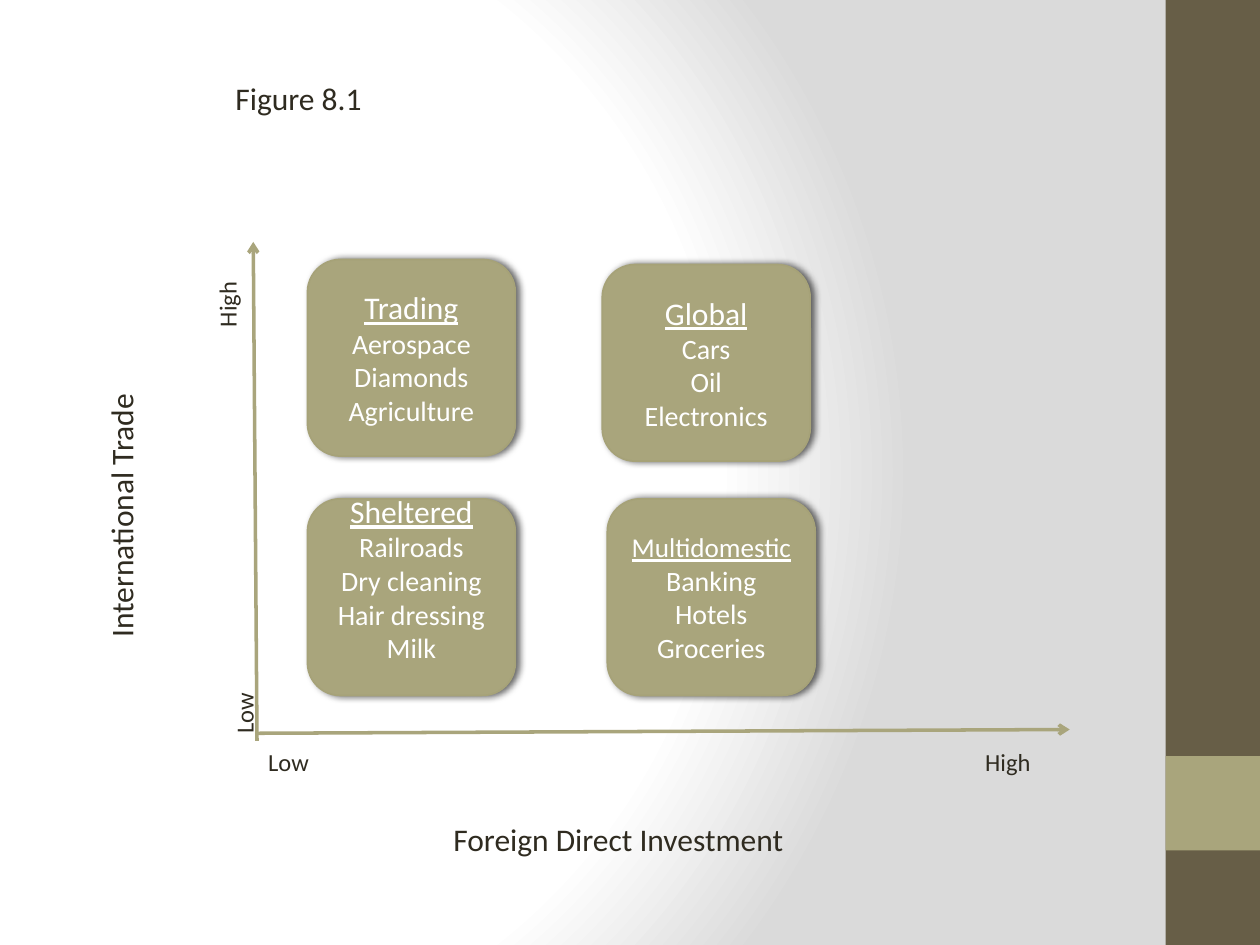
from lxml.etree import SubElement
from pptx import Presentation
from pptx.dml.color import RGBColor
from pptx.enum.shapes import MSO_CONNECTOR as Connector, MSO_SHAPE as Shape
from pptx.enum.text import MSO_ANCHOR as Anchor, MSO_AUTO_SIZE as AutoSize, PP_ALIGN as Align
from pptx.oxml import parse_xml
from pptx.oxml.ns import qn
from pptx.util import Inches, Pt

DARK, OLIVE, EDGE, INK, WHITE = "675E47", "A9A57C", "A6A278", "2F2B20", "FFFFFF"


def paint(target, shade):
    if hasattr(target, "solid"):
        target.solid()
        target = target.fore_color
    target.rgb = RGBColor.from_string(shade)


def write(paragraph, wording, shade, **formats):
    run = paragraph.add_run()
    run.text = wording
    for key, value in {"name": "Calibri", **formats}.items():
        setattr(run.font, key, value)
    paint(run.font.color, shade)


deck = Presentation()
deck.slide_width, deck.slide_height = Inches(10), Inches(7.5)
col, row = deck.slide_width / 100, deck.slide_height / 75
slide = deck.slides.add_slide(deck.slide_layouts[6])
shapes = slide.shapes

slide.background.fill.gradient()
backdrop = slide.element.find(".//" + qn("a:gradFill"))
stops = "".join(
    f'<a:gs pos="{share * 1000}"><a:srgbClr val="{shade}"/></a:gs>'
    for share, shade in [(0, WHITE), (75, WHITE), (100, "DADADA")]
)
backdrop.getparent().replace(backdrop, parse_xml(
    '<a:gradFill xmlns:a="http://schemas.openxmlformats.org/drawingml/2006/main" rotWithShape="1">'
    f'<a:gsLst>{stops}</a:gsLst><a:path path="circle">'
    '<a:fillToRect l="20000" t="50000" r="100000" b="50000"/></a:path></a:gradFill>'
))

for top, height, shade in [(0, 75, DARK), (60, 7.5, OLIVE)]:
    band = shapes.add_shape(
        Shape.RECTANGLE, int(92.5 * col), int(top * row), int(7.5 * col), int(height * row))
    band.shadow.inherit = False
    paint(band.fill, shade)
    band.line.fill.background()

for x1, y1, x2, y2 in [(20.4, 58.8, 20.1, 19.2), (20.3, 58.2, 84.9, 57.9)]:
    axis = shapes.add_connector(
        Connector.STRAIGHT, int(x1 * col), int(y1 * row), int(x2 * col), int(y2 * row))
    axis.line.width = Pt(2)
    paint(axis.line.fill, OLIVE)
    SubElement(axis.line._get_or_add_ln(), qn("a:tailEnd"), type="arrow")
    SubElement(axis._element.spPr, qn("a:effectLst"))

quadrants = [
    (24.4, 20.6, 18, 0.05, "Trading", ["Aerospace", "Diamonds", "Agriculture"]),
    (24.4, 39.6, 18, 0.35, "Sheltered", ["Railroads", "Dry cleaning", "Hair dressing", "Milk"]),
    (47.8, 21, 18, 0.05, "Global", ["Cars", "Oil", "Electronics"]),
    (48.2, 39.6, 15.5, 0.05, "Multidomestic", ["Banking", "Hotels", "Groceries"]),
]
for left, top, heading_size, foot, heading, industries in quadrants:
    quadrant = shapes.add_shape(
        Shape.ROUNDED_RECTANGLE, int(left * col), int(top * row), int(16.5 * col), int(15.6 * row))
    paint(quadrant.fill, OLIVE)
    paint(quadrant.line.fill, EDGE)
    quadrant.line.width = Pt(1)
    quadrant.shadow.inherit = False
    shadow = SubElement(
        quadrant._element.spPr.find(qn("a:effectLst")), qn("a:outerShdw"),
        blurRad=str(Pt(4)), dist=str(Pt(2)), dir="0", rotWithShape="0")
    black = SubElement(shadow, qn("a:srgbClr"), val="000000")
    SubElement(black, qn("a:alpha"), val="60000")
    frame = quadrant.text_frame
    layout = {"word_wrap": True, "vertical_anchor": Anchor.MIDDLE, "margin_bottom": Inches(foot)}
    for key, value in layout.items():
        setattr(frame, key, value)
    write(frame.paragraphs[0], heading, WHITE, size=Pt(heading_size), underline=True)
    for industry in industries:
        write(frame.add_paragraph(), industry, WHITE, size=Pt(16), underline=False)
    for paragraph in frame.paragraphs:
        paragraph.alignment = Align.CENTER

captions = [
    ("International Trade", -3.3, 36.7, 25.8, 18, 270),
    ("Foreign Direct Investment", 35, 64.6, 42.4, 18, 0),
    ("Low", 20.3, 58.8, 7.4, 14, 0),
    ("Low", 15.7, 53.8, 7.4, 14, 270),
    ("High", 15, 22.2, 6.1, 14, 270),
    ("High", 77.2, 58.8, 6.1, 14, 0),
    ("Figure 8.1", 17.7, 5.8, 32.4, 18, 0),
]
for wording, left, top, width, size, turn in captions:
    height = 4 if size == 18 else 3.4
    caption = shapes.add_textbox(
        int(left * col), int(top * row), int(width * col), int(height * row))
    caption.rotation = turn
    for key, value in {"word_wrap": True, "auto_size": AutoSize.SHAPE_TO_FIT_TEXT}.items():
        setattr(caption.text_frame, key, value)
    write(caption.text_frame.paragraphs[0], wording, INK, size=Pt(size))

deck.save("out.pptx")
